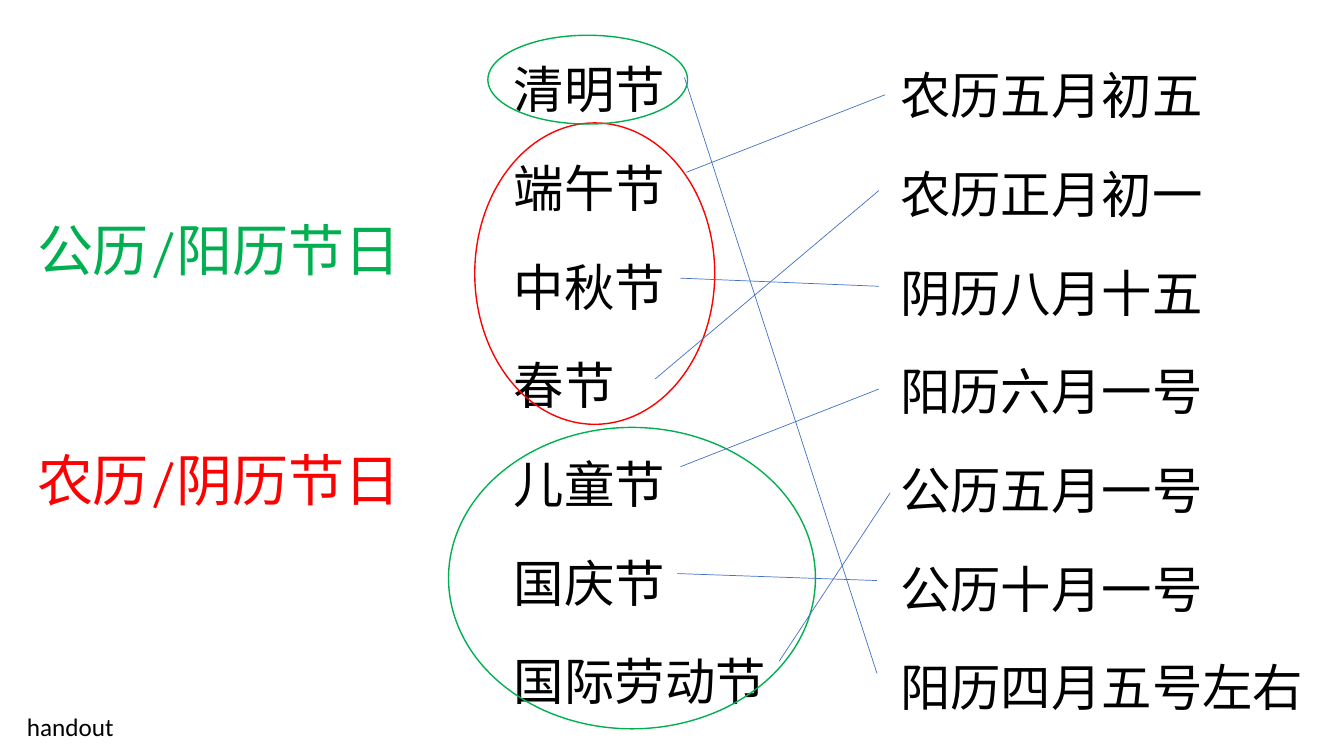
from dataclasses import dataclass

from lxml import etree
from pptx import Presentation
from pptx import util as u
from pptx.dml import color
from pptx.enum import shapes, text
from pptx.oxml import ns


@dataclass(frozen=True)
class Theme:
    serif: str = "Cambria"
    sans: str = "Calibri"
    ink: str = "000000"
    solar: str = "00B050"
    lunar: str = "FF0000"
    link: str = "4472C4"
    item: int = 36
    head: int = 40
    note: int = 18
    thin: float = 0.5
    ring: float = 1


FESTIVALS = ["清明节", "端午节", "中秋节", "春节", "儿童节", "国庆节", "国际劳动节"]
DATES = ["农历五月初五", "农历正月初一", "阴历八月十五", "阳历六月一号",
         "公历五月一号", "公历十月一号", "阳历四月五号左右"]

# Each match runs from a festival to its date: x1, y1, x2, y2
MATCHES = [
    (488.9, 55.4, 626.4, 481),
    (490.3, 123.1, 632.2, 67.7),
    (486, 198.7, 627.8, 204.5),
    (468, 270.7, 627.8, 136.1),
    (486, 333.4, 627.8, 277.9),
    (483.8, 409.7, 626.4, 414.7),
    (556.6, 472.3, 635.8, 352.1),
]


class Page:
    def __init__(self, slide, theme):
        self.slide = slide
        self.theme = theme

    def label(self, box, lines, size, font, lead=None, gap=0, wrap=True):
        """Add a text box; lines holds (words, colour) pairs."""
        shape = self.slide.shapes.add_textbox(*map(u.Pt, box))
        frame = shape.text_frame
        frame.word_wrap = wrap
        if not wrap:
            frame.auto_size = text.MSO_AUTO_SIZE.SHAPE_TO_FIT_TEXT
        for i, (words, hue) in enumerate(lines):
            para = frame.add_paragraph() if i else frame.paragraphs[0]
            para.text = words
            para.font.size = u.Pt(size)
            para.font.name = font
            para.font.color.rgb = color.RGBColor.from_string(hue)
            para.line_spacing = lead
            para.space_before = u.Pt(gap)
        return frame

    def column(self, box, items):
        look = self.theme
        self.label(box, [(item, look.ink) for item in items],
                   look.item, look.serif, lead=1.4, gap=10)

    def stroke(self, line, hue, width):
        line.color.rgb = color.RGBColor.from_string(hue)
        line.width = u.Pt(width)

    def ring(self, box, hue):
        oval = self.slide.shapes.add_shape(shapes.MSO_SHAPE.OVAL, *map(u.Pt, box))
        oval.shadow.inherit = False
        oval.fill.background()
        self.stroke(oval.line, hue, self.theme.ring)

    def link(self, ends):
        wire = self.slide.shapes.add_connector(
            shapes.MSO_CONNECTOR.STRAIGHT, *map(u.Pt, ends))
        self.stroke(wire.line, self.theme.link, self.theme.thin)
        etree.SubElement(wire._element.spPr, ns.qn("a:effectLst"))


def main():
    deck = Presentation()
    deck.slide_width, deck.slide_height = u.Pt(960), u.Pt(540)
    look = Theme()
    page = Page(deck.slides.add_slide(deck.slide_layouts[6]), look)

    page.column((360, 20.9, 196.6, 497.5), FESTIVALS)
    page.column((635.8, 25.2, 324, 497.5), DATES)
    kinds = page.label((19.4, 126.7, 324, 413),
                       [("公历/阳历节日", look.solar), ("农历/阴历节日", look.lunar)],
                       look.head, look.serif, lead=1.5, gap=92)
    kinds.paragraphs[0].space_before = u.Pt(10)

    page.ring((339.1, 87.8, 171.4, 215.3), look.lunar)
    page.ring((320.4, 305.3, 262.1, 215.3), look.solar)
    page.ring((348.5, 25.2, 142.6, 63.4), look.solar)
    for ends in MATCHES:
        page.link(ends)

    page.label((12.2, 504.7, 77, 28.8), [("handout", look.ink)],
               look.note, look.sans, wrap=False)
    deck.save("out.pptx")


if __name__ == "__main__":
    main()
